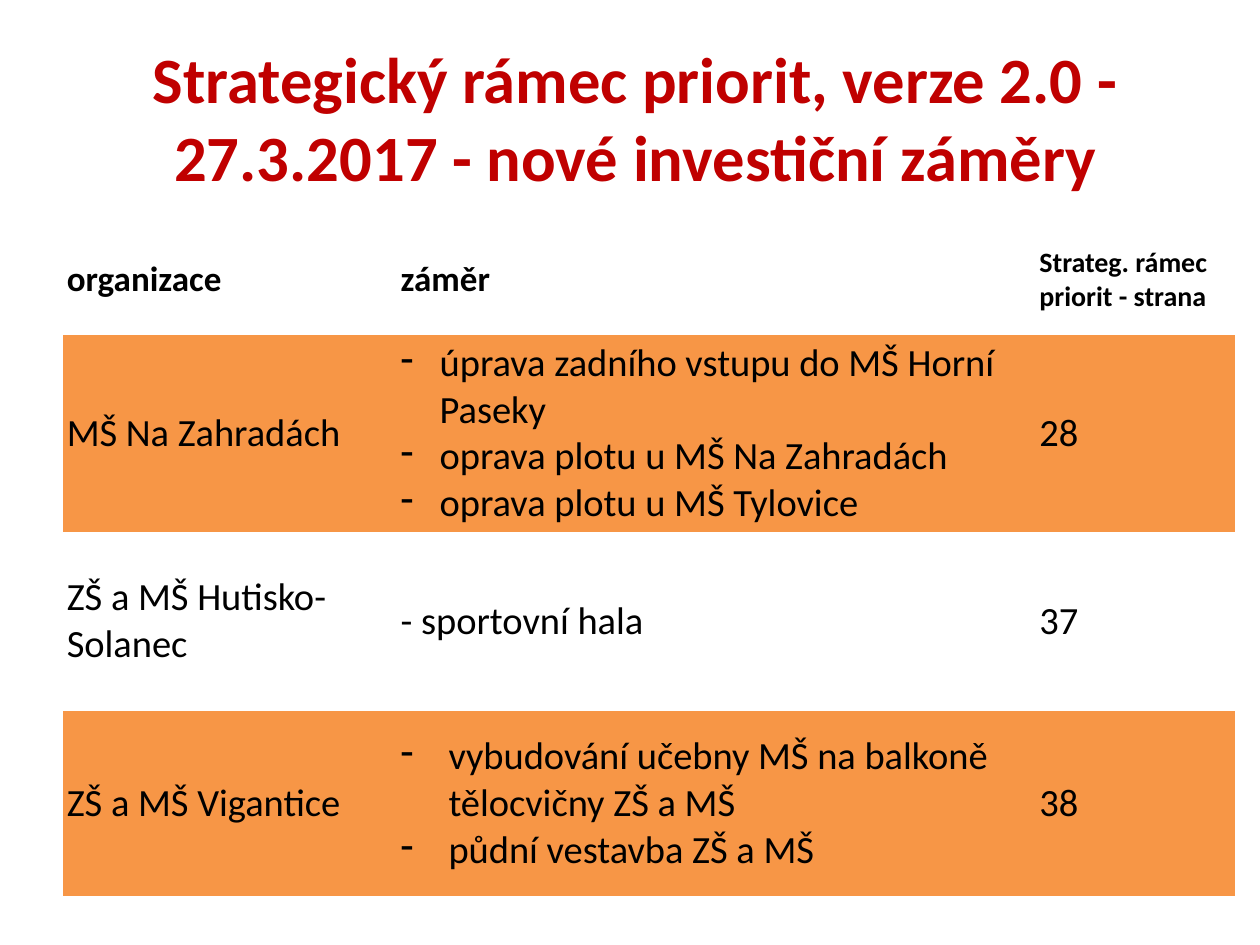
from lxml.etree import SubElement
from pptx import Presentation
from pptx.dml.color import RGBColor
from pptx.enum.text import MSO_ANCHOR, PP_ALIGN
from pptx.oxml.ns import qn
from pptx.util import Inches, Pt

RED = RGBColor(0xC0, 0x00, 0x00)
ORANGE = RGBColor(0xF7, 0x96, 0x46)
BLACK = RGBColor(0x00, 0x00, 0x00)
FONT = "Calibri"
NO_GRID_STYLE = "{2D5ABB26-0587-4C30-8999-92F81FD0307C}"

SLIDE_WIDTH, SLIDE_HEIGHT = 10, 7.5
TITLE = "Strategický rámec priorit, verze 2.0 - 27.3.2017 - nové investiční záměry"
COLUMN_WIDTHS = [2.65, 5.07, 1.58]
ROW_HEIGHTS = [0.88, 1.56, 1.42, 1.47]
HEADINGS = [("organizace", 20), ("záměr", 20), ("Strateg. rámec priorit - strana", 16)]
# organisation, plans, dash indent in inches (0 for plain text), page
PLANS = [
    ("MŠ Na Zahradách",
     ["úprava zadního vstupu do MŠ Horní Paseky",
      "oprava plotu u MŠ Na Zahradách",
      "oprava plotu u MŠ Tylovice"], 0.31, "28"),
    ("ZŠ a MŠ Hutisko-Solanec", ["- sportovní hala"], 0, "37"),
    ("ZŠ a MŠ Vigantice",
     ["vybudování učebny MŠ na balkoně tělocvičny ZŠ a MŠ",
      "půdní vestavba ZŠ a MŠ"], 0.38, "38"),
]


def set_font(paragraph, size, color, bold):
    font = paragraph.font
    font.name, font.size, font.bold = FONT, Pt(size), bold
    font.color.rgb = color


def add_dash(paragraph, indent):
    """Give the paragraph a dash bullet with a hanging indent."""
    properties = paragraph._p.get_or_add_pPr()
    properties.set("marL", str(Inches(indent)))
    properties.set("indent", str(-Inches(indent)))
    SubElement(properties, qn("a:buChar"), char="-")


def add_title(slide):
    box = slide.shapes.add_textbox(Inches(0.28), Inches(0.3), Inches(9.53), Inches(1.25))
    frame = box.text_frame
    frame.word_wrap = True
    frame.vertical_anchor = MSO_ANCHOR.MIDDLE
    heading = frame.paragraphs[0]
    heading.text = TITLE
    heading.alignment = PP_ALIGN.CENTER
    set_font(heading, 36.9, RED, True)


def fill_cell(cell, lines, size=22, bold=False, indent=0, shaded=False):
    cell.vertical_anchor = MSO_ANCHOR.MIDDLE
    cell.margin_left = cell.margin_right = Inches(0.03)
    cell.margin_top = cell.margin_bottom = Inches(0.02)
    if shaded:
        cell.fill.solid()
        cell.fill.fore_color.rgb = ORANGE
    else:
        cell.fill.background()
    cell.text = "\n".join(lines)
    for paragraph in cell.text_frame.paragraphs:
        if indent:
            add_dash(paragraph, indent)
        set_font(paragraph, size, BLACK, bold)


def add_plans_table(slide):
    frame = slide.shapes.add_table(
        len(ROW_HEIGHTS), len(COLUMN_WIDTHS), Inches(0.5), Inches(1.78),
        Inches(sum(COLUMN_WIDTHS)), Inches(sum(ROW_HEIGHTS)))
    table = frame.table
    table.first_row = table.horz_banding = False
    table._tbl.tblPr.find(qn("a:tableStyleId")).text = NO_GRID_STYLE
    for column, width in zip(table.columns, COLUMN_WIDTHS):
        column.width = Inches(width)
    for row, height in zip(table.rows, ROW_HEIGHTS):
        row.height = Inches(height)

    for column, (heading, size) in enumerate(HEADINGS):
        fill_cell(table.cell(0, column), [heading], size, bold=True)
    for row, (organisation, plans, indent, page) in enumerate(PLANS, start=1):
        shaded = row % 2 == 1
        fill_cell(table.cell(row, 0), [organisation], shaded=shaded)
        fill_cell(table.cell(row, 1), plans, indent=indent, shaded=shaded)
        fill_cell(table.cell(row, 2), [page], shaded=shaded)


def main():
    presentation = Presentation()
    presentation.slide_width = Inches(SLIDE_WIDTH)
    presentation.slide_height = Inches(SLIDE_HEIGHT)
    slide = presentation.slides.add_slide(presentation.slide_layouts[6])
    add_title(slide)
    add_plans_table(slide)
    presentation.save("out.pptx")


if __name__ == "__main__":
    main()
